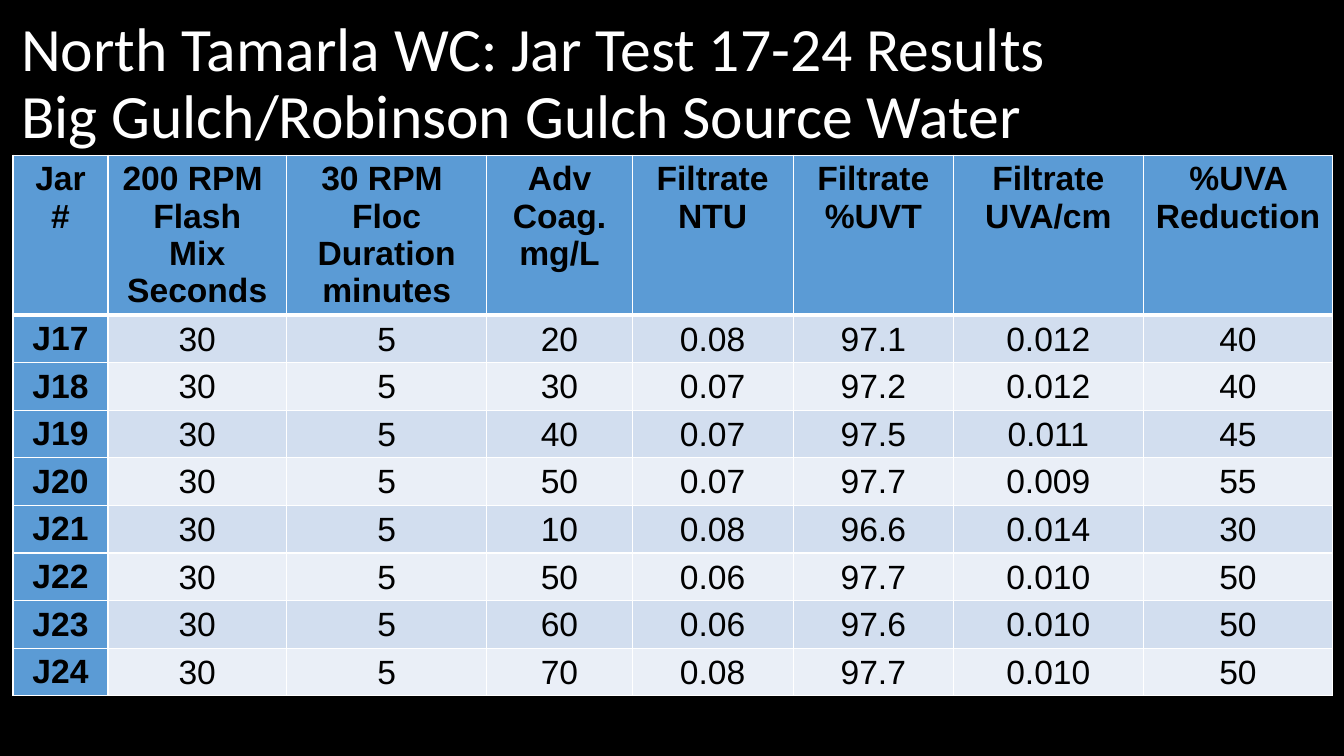
import pptx
import pptx.dml.color
import pptx.enum.text
import pptx.oxml.ns
import pptx.util
from lxml import etree

Cm = pptx.util.Cm
Pt = pptx.util.Pt

COLORS = {
    "background": "000000",
    "title": "FFFFFF",
    "text": "000000",
    "border": "FFFFFF",
    "header": "5B9BD5",
    "odd": "D2DEEF",
    "even": "EAEFF7",
}

TITLE_LINES = [
    "North Tamarla WC: Jar Test 17-24 Results",
    "Big Gulch/Robinson Gulch Source Water",
]

# Each column: width in cm and heading paragraphs
COLUMNS = [
    (2.39, ["Jar", "#"]),
    (4.5, ["200 RPM ", "Flash", "Mix", "Seconds"]),
    (5.05, ["30 RPM ", "Floc", "Duration", "minutes"]),
    (3.66, ["Adv Coag.", "mg/L"]),
    (4.06, ["Filtrate", "NTU"]),
    (4.04, ["Filtrate", "%UVT"]),
    (4.78, ["Filtrate", "UVA/cm"]),
    (4.78, ["%UVA Reduction"]),
]

JAR_RESULTS = [
    ["J17", "30", "5", "20", "0.08", "97.1", "0.012", "40"],
    ["J18", "30", "5", "30", "0.07", "97.2", "0.012", "40"],
    ["J19", "30", "5", "40", "0.07", "97.5", "0.011", "45"],
    ["J20", "30", "5", "50", "0.07", "97.7", "0.009", "55"],
    ["J21", "30", "5", "10", "0.08", "96.6", "0.014", "30"],
    ["J22", "30", "5", "50", "0.06", "97.7", "0.010", "50"],
    ["J23", "30", "5", "60", "0.06", "97.6", "0.010", "50"],
    ["J24", "30", "5", "70", "0.08", "97.7", "0.010", "50"],
]


class JarTestSlide:
    """Holds the style and the current slide."""

    title_font, title_size = "Calibri", Pt(44)
    table_font, table_size = "Arial", Pt(24)

    def __init__(self, deck):
        self.slide = deck.slides.add_slide(deck.slide_layouts[5])
        fill = self.slide.background.fill
        fill.solid()
        fill.fore_color.rgb = self.rgb("background")

    def rgb(self, color):
        return pptx.dml.color.RGBColor.from_string(COLORS[color])

    def run(self, paragraph, words, font, size, color, bold=False):
        run = paragraph.add_run()
        run.text = words
        run.font.name = font
        run.font.size = size
        run.font.bold = bold
        run.font.color.rgb = self.rgb(color)

    def title(self, lines, left, top, width, height):
        heading = self.slide.shapes.title
        heading.left, heading.top = Cm(left), Cm(top)
        heading.width, heading.height = Cm(width), Cm(height)
        frame = heading.text_frame
        frame.word_wrap = True
        frame.auto_size = pptx.enum.text.MSO_AUTO_SIZE.NONE
        frame.vertical_anchor = pptx.enum.text.MSO_ANCHOR.MIDDLE
        paragraph = frame.paragraphs[0]
        paragraph.alignment = pptx.enum.text.PP_ALIGN.LEFT
        paragraph.line_spacing = 0.9
        for number, line in enumerate(lines):
            if number:
                paragraph.add_line_break()
            self.run(paragraph, line, self.title_font, self.title_size, "title")

    def borders(self, cell, top=1, bottom=1):
        properties = cell._tc.get_or_add_tcPr()
        qn = pptx.oxml.ns.qn
        for side, points in (("L", 1), ("R", 1), ("T", top), ("B", bottom)):
            line = etree.SubElement(properties, qn(f"a:ln{side}"), w=str(Pt(points)))
            solid = etree.SubElement(line, qn("a:solidFill"))
            etree.SubElement(solid, qn("a:srgbClr"), val=COLORS["border"])

    def cell(self, cell, paragraphs, fill, bold):
        cell.fill.solid()
        cell.fill.fore_color.rgb = self.rgb(fill)
        for number, words in enumerate(paragraphs):
            frame = cell.text_frame
            paragraph = frame.add_paragraph() if number else frame.paragraphs[0]
            paragraph.alignment = pptx.enum.text.PP_ALIGN.CENTER
            self.run(paragraph, words, self.table_font, self.table_size, "text", bold)

    def table(self, columns, results, left, top, header_height, row_height):
        widths = [width for width, _ in columns]
        height = header_height + row_height * len(results)
        table = self.slide.shapes.add_table(
            len(results) + 1, len(columns),
            Cm(left), Cm(top), Cm(sum(widths)), Cm(height)).table
        table.first_col = True
        for column, width in zip(table.columns, widths):
            column.width = Cm(width)
        for number, row in enumerate(table.rows):
            row.height = Cm(row_height if number else header_height)

        # Header row, with a thick rule below
        for column, (_, heading) in enumerate(columns):
            cell = table.cell(0, column)
            self.borders(cell, bottom=3)
            self.cell(cell, heading, "header", True)

        # One banded row per jar, with the jar name as row header
        for number, values in enumerate(results, 1):
            band = "odd" if number % 2 else "even"
            for column, value in enumerate(values):
                cell = table.cell(number, column)
                self.borders(cell, top=3 if number == 1 else 1)
                if column == 0:
                    self.cell(cell, [value], "header", True)
                    continue
                self.cell(cell, [value], band, False)
                cell.vertical_anchor = pptx.enum.text.MSO_ANCHOR.MIDDLE
                cell.margin_left = cell.margin_right = cell.margin_top = Cm(0.03)
                cell.margin_bottom = Cm(0)


def main():
    deck = pptx.Presentation()
    deck.slide_width, deck.slide_height = Cm(33.87), Cm(19.05)
    jar_test = JarTestSlide(deck)
    jar_test.title(TITLE_LINES, 0.28, 0.3, 31.24, 3.68)
    jar_test.table(COLUMNS, JAR_RESULTS, 0.33, 3.91, 2.64, 1.12)
    deck.save("out.pptx")


if __name__ == "__main__":
    main()
